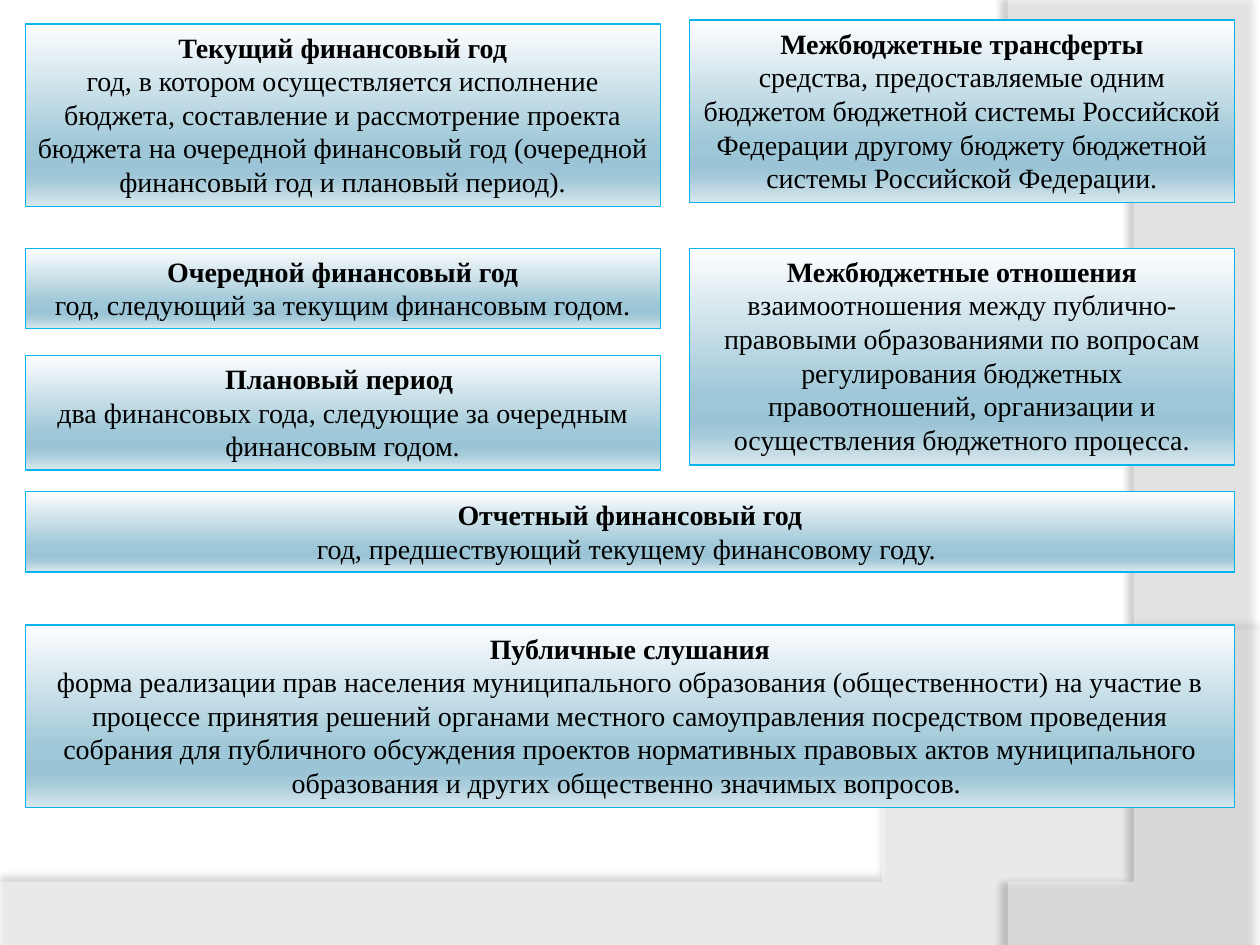
from lxml import etree
from pptx import Presentation
from pptx import util as u
from pptx.dml.color import RGBColor
from pptx.enum import shapes, text
from pptx.oxml.ns import qn

WIDTH, HEIGHT = 10, 7.5
MARGIN, GUTTER, LEFT_WIDTH = 0.2, 0.23, 5.04
FULL_WIDTH = WIDTH - 2 * MARGIN
RIGHT = MARGIN + LEFT_WIDTH + GUTTER
COLUMNS = {
    "left": (MARGIN, LEFT_WIDTH),
    "right": (RIGHT, WIDTH - MARGIN - RIGHT),
    "full": (MARGIN, FULL_WIDTH),
}
GRADIENT = [(0, "FEFEFF"), (68, "9EC7D7"), (81, "9BC5D6"), (86, "A5CAD9"), (100, "DAE8EE")]

TERMS = [
    ("right", 1.97, 1.72, "Межбюджетные отношения",
     "взаимоотношения между публично-правовыми образованиями по вопросам регулирования "
     "бюджетных правоотношений, организации и осуществления бюджетного процесса."),
    ("right", 0.16, 1.45, "Межбюджетные трансферты",
     "средства, предоставляемые одним бюджетом бюджетной системы Российской Федерации "
     "другому бюджету бюджетной системы Российской Федерации."),
    ("left", 0.19, 1.45, "Текущий финансовый год",
     "год, в котором осуществляется исполнение бюджета, составление и рассмотрение проекта "
     "бюджета на очередной финансовый год (очередной финансовый год и плановый период)."),
    ("left", 1.97, 0.64, "Очередной финансовый год",
     "год, следующий за текущим финансовым годом."),
    ("left", 2.82, 0.91, "Плановый период ",
     "два финансовых года, следующие за очередным финансовым годом."),
    ("full", 3.9, 0.64, "Отчетный финансовый год",
     "год, предшествующий текущему финансовому году. "),
    ("full", 4.96, 1.45, "Публичные слушания",
     "форма реализации прав населения муниципального образования (общественности) на участие "
     "в процессе принятия решений органами местного самоуправления посредством проведения "
     "собрания для публичного обсуждения проектов нормативных правовых актов муниципального "
     "образования и других общественно значимых вопросов. "),
]

WAVES = [
    {"corners": [(0, 7.05), (0, 7.51), (10, 7.51)],
     "curve": [(10, 5.2), (5.59, 7.29), (3.91, 7.19), (0, 7.05)],
     "opacity": 45, "shadow": (35, 4, 3.5, 270)},
    {"corners": [(10, 0.02), (10, 7.5)],
     "curve": [(8.21, 7.5), (9.35, 6.19), (10.18, 3), (8, 0)],
     "opacity": 40, "shadow": (45, 4, 4, 180)},
]


def color(value):
    return RGBColor.from_string(value)


def add_color(parent, value, opacity=100):
    element = etree.SubElement(parent, qn("a:srgbClr"), val=value)
    if opacity < 100:
        etree.SubElement(element, qn("a:alpha"), val=str(opacity * 1000))
    return element


def bezier(points, steps=40):
    for step in range(steps + 1):
        t = step / steps
        weights = ((1 - t) ** 3, 3 * t * (1 - t) ** 2, 3 * t ** 2 * (1 - t), t ** 3)
        yield tuple(sum(w * p[axis] for w, p in zip(weights, points)) for axis in (0, 1))


def add_wave(slide, corners, curve, opacity, shadow):
    outline = corners + list(bezier(curve))
    builder = slide.shapes.build_freeform(*outline[0], scale=u.Inches(1))
    builder.add_line_segments(outline[1:], close=True)
    shape = builder.convert_to_shape()
    shape.fill.solid()
    shape.fill.fore_color.rgb = color("FFFFFF")
    shape.line.fill.background()
    properties = shape._element.spPr
    fill_color = properties.find(qn("a:solidFill"))[0]
    etree.SubElement(fill_color, qn("a:alpha"), val=str(opacity * 1000))
    shape.shadow.inherit = False
    shadow_opacity, blur, distance, angle = shadow
    effect = etree.SubElement(
        properties.find(qn("a:effectLst")), qn("a:outerShdw"),
        blurRad=str(u.Pt(blur)), dist=str(u.Pt(distance)),
        dir=str(angle * 60000), algn="ctr", rotWithShape="0")
    add_color(effect, "000000", shadow_opacity)


def fill_gradient(shape):
    shape.fill.gradient()
    shape.fill.gradient_angle = 270
    stops = shape._element.spPr.find(qn("a:gradFill")).find(qn("a:gsLst"))
    for stop in list(stops):
        stops.remove(stop)
    for position, value in GRADIENT:
        add_color(etree.SubElement(stops, qn("a:gs"), pos=str(position * 1000)), value)


def add_term(slide, column, top, height, term, definition):
    left, width = COLUMNS[column]
    shape = slide.shapes.add_shape(
        shapes.MSO_SHAPE.RECTANGLE, *map(u.Inches, (left, top, width, height)))
    shape.shadow.inherit = False
    fill_gradient(shape)
    shape.line.color.rgb = color("0AB3EC")
    shape.line.width = u.Pt(0.75)
    frame = shape.text_frame
    frame.word_wrap = True
    frame.auto_size = text.MSO_AUTO_SIZE.SHAPE_TO_FIT_TEXT
    frame.vertical_anchor = text.MSO_ANCHOR.TOP
    frame.text = f"{term}\n{definition}"
    for paragraph, bold in zip(frame.paragraphs, (True, False)):
        paragraph.alignment = text.PP_ALIGN.CENTER
        paragraph.font.name = "Times New Roman"
        paragraph.font.size = u.Pt(16)
        paragraph.font.bold = bold
        paragraph.font.color.rgb = color("000000")


def main():
    presentation = Presentation()
    presentation.slide_width = u.Inches(WIDTH)
    presentation.slide_height = u.Inches(HEIGHT)
    slide = presentation.slides.add_slide(presentation.slide_layouts[6])
    for wave in WAVES:
        add_wave(slide, **wave)
    for term in TERMS:
        add_term(slide, *term)
    presentation.save("out.pptx")


if __name__ == "__main__":
    main()
